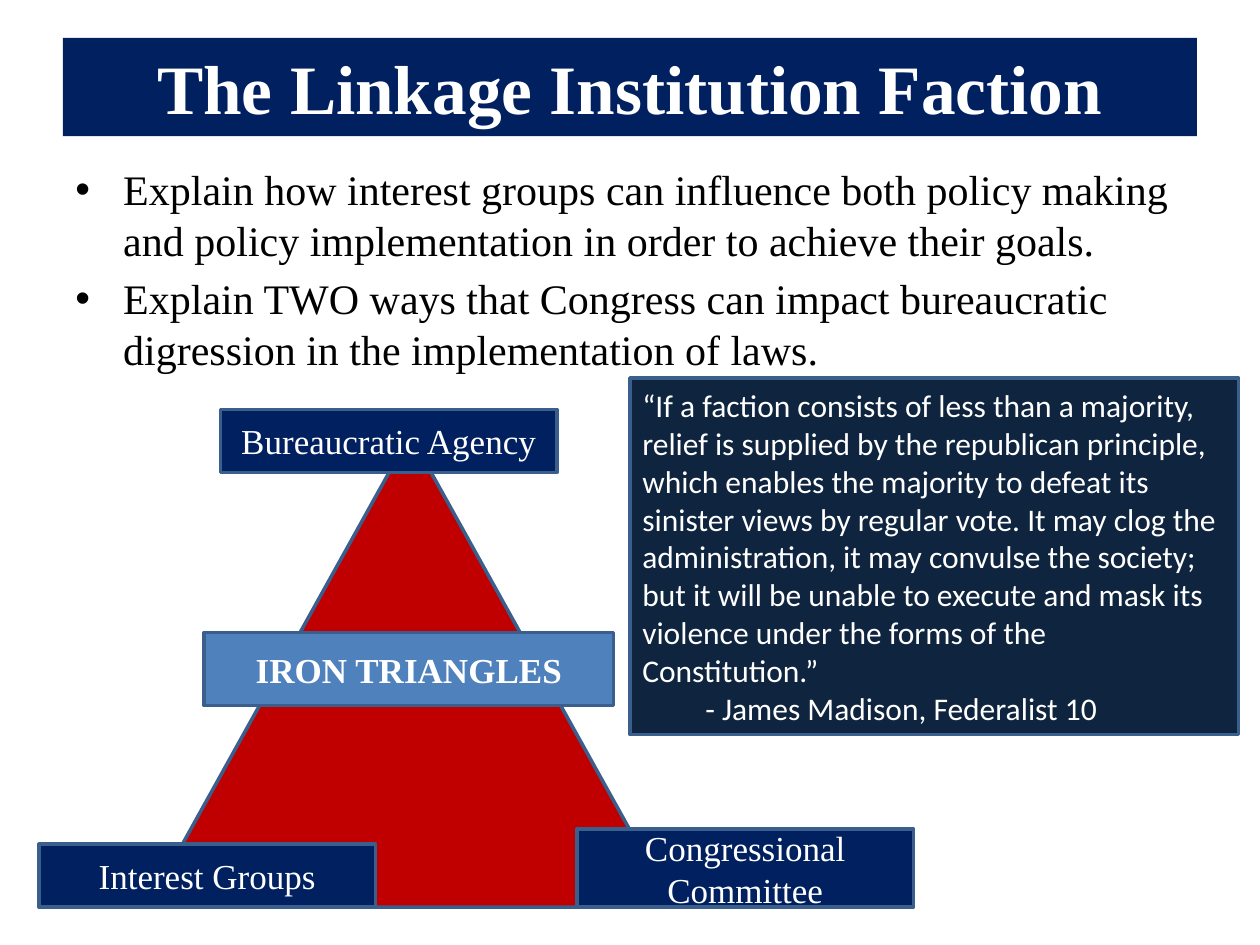
from lxml import etree
from pptx import Presentation
from pptx.dml.color import RGBColor
from pptx.enum.shapes import MSO_SHAPE as SHAPE
from pptx.enum.text import MSO_ANCHOR as ANCHOR, PP_ALIGN as ALIGN
from pptx.oxml.ns import qn
from pptx.util import Inches, Pt

COLORS = {"navy": "002060", "midnight": "0F243E", "red": "C00000", "blue": "4F81BD",
          "outline": "3A5F8C", "white": "FFFFFF", "black": "000000"}
SERIF, SANS = "Times New Roman", "Calibri"


def color(name):
    return RGBColor.from_string(COLORS[name])


def add_block(slide, kind, place, fill, paragraphs=(), outlined=True, align=ALIGN.CENTER,
              anchor=ANCHOR.MIDDLE, text_color="white", **font_format):
    """Add a filled shape whose paragraphs share one format."""
    shape = slide.shapes.add_shape(kind, *map(Inches, place))
    shape.shadow.inherit = False
    shape.fill.solid()
    shape.fill.fore_color.rgb = color(fill)
    if outlined:
        shape.line.color.rgb = color("outline")
        shape.line.width = Pt(2)
    else:
        shape.line.fill.background()
    frame = shape.text_frame
    frame.word_wrap = True
    frame.vertical_anchor = anchor
    for index, text in enumerate(paragraphs):
        paragraph = frame.paragraphs[0] if index == 0 else frame.add_paragraph()
        paragraph.alignment = align
        run = paragraph.add_run()
        run.text = text
        run.font.color.rgb = color(text_color)
        for name, value in font_format.items():
            setattr(run.font, name, value)
    return shape


presentation = Presentation()
presentation.slide_width, presentation.slide_height = Inches(10), Inches(7.5)
slide = presentation.slides.add_slide(presentation.slide_layouts[6])

# Title band
add_block(slide, SHAPE.RECTANGLE, (0.5, 0.3, 9, 0.78), "navy",
          ["The Linkage Institution Faction"], outlined=False,
          name=SERIF, size=Pt(39.6), bold=True)

# Bulleted tasks
tasks = add_block(
    slide, SHAPE.RECTANGLE, (0.5, 1.25, 9, 5.45), "white",
    ["Explain how interest groups can influence both policy making and policy "
     "implementation in order to achieve their goals.",
     "Explain TWO ways that Congress can impact bureaucratic digression in the "
     "implementation of laws."],
    outlined=False, align=ALIGN.LEFT, anchor=ANCHOR.TOP, text_color="black",
    name=SERIF, size=Pt(24))
for index, paragraph in enumerate(tasks.text_frame.paragraphs):
    paragraph.space_before = Pt(4.8 if index else 0)
    properties = paragraph._p.get_or_add_pPr()
    properties.set("marL", str(Inches(0.38)))
    properties.set("indent", str(-Inches(0.38)))
    etree.SubElement(properties, qn("a:buFont")).set("typeface", "Arial")
    etree.SubElement(properties, qn("a:buChar")).set("char", "•")

# Iron triangle with a label on each corner
add_block(slide, SHAPE.ISOSCELES_TRIANGLE, (1.17, 3.45, 4.17, 3.75), "red")
corners = [
    ("Bureaucratic Agency", 1.75, 3.25, 0.5),
    ("Congressional Committee", 4.58, 6.58, 0.62),
    ("Interest Groups", 0.31, 6.7, 0.5),
]
for label, left, top, height in corners:
    add_block(slide, SHAPE.RECTANGLE, (left, top, 2.67, height), "navy", [label],
              name=SERIF, size=Pt(20))

# Madison quotation
add_block(
    slide, SHAPE.RECTANGLE, (5, 3, 4.83, 2.83), "midnight",
    ["“If a faction consists of less than a majority, relief is supplied by the "
     "republican principle, which enables the majority to defeat its sinister views "
     "by regular vote. It may clog the administration, it may convulse the society; "
     "but it will be unable to execute and mask its violence under the forms of the "
     "Constitution.”",
     "\t- James Madison, Federalist 10"],
    align=ALIGN.LEFT, name=SANS, size=Pt(18))

# Name of the triangle
add_block(slide, SHAPE.RECTANGLE, (1.62, 5.02, 3.25, 0.58), "blue", ["IRON TRIANGLES"],
          name=SERIF, size=Pt(20), bold=True)

presentation.save("out.pptx")
